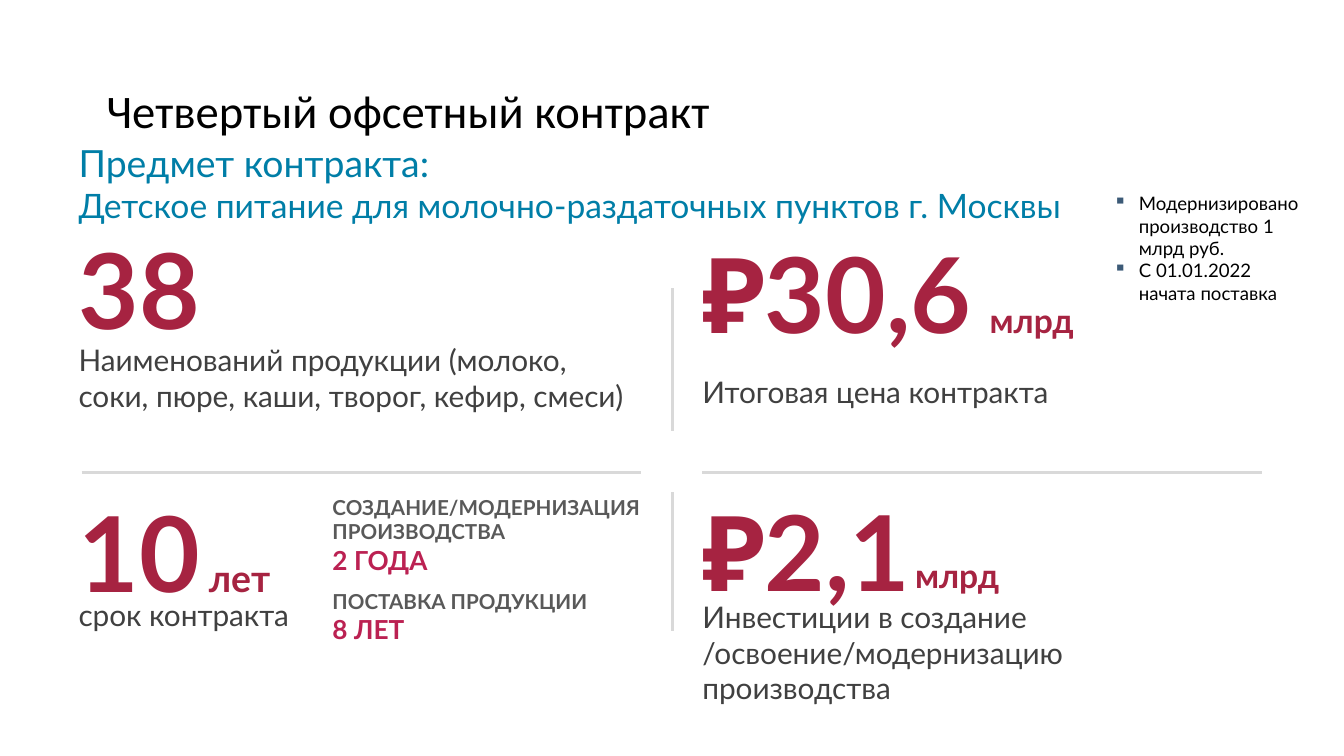
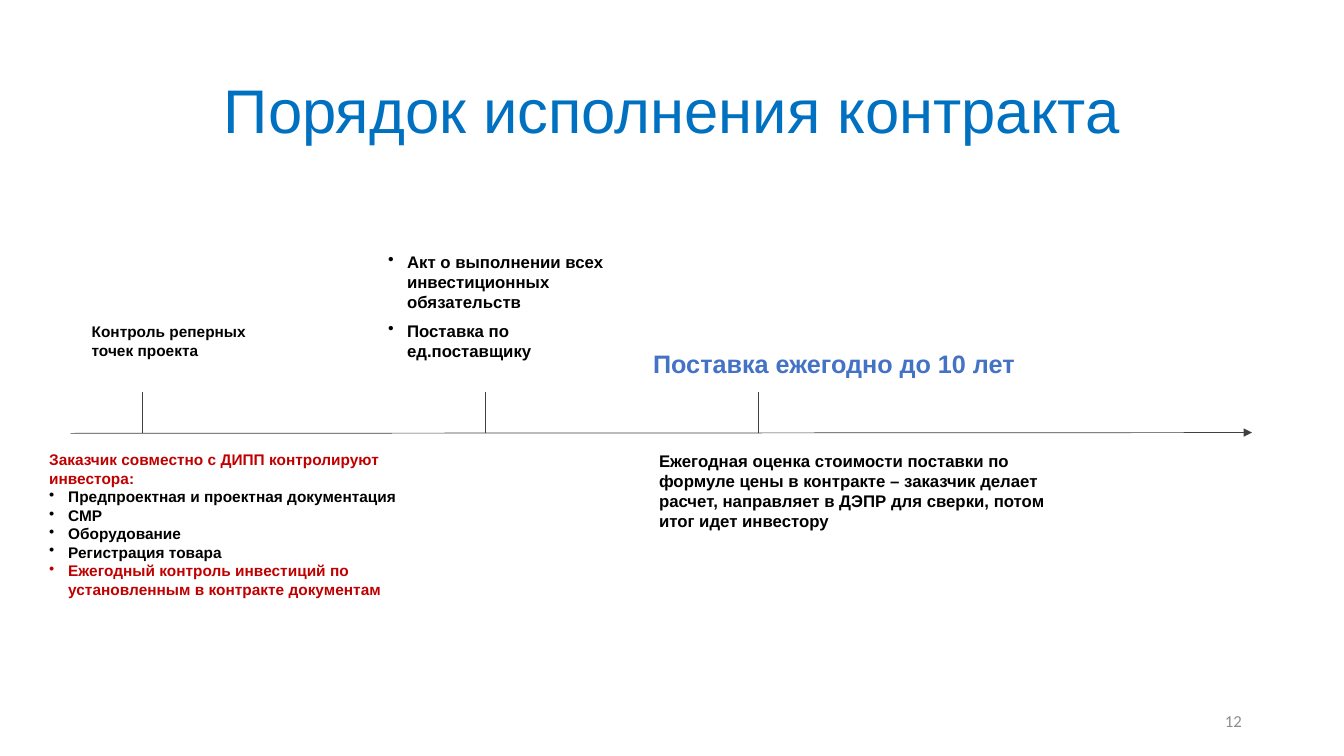
"""Builds two slides on an offset contract: key figures and the execution timeline."""
from dataclasses import dataclass
from typing import Optional

from lxml import etree
from pptx import Presentation
from pptx.dml.color import RGBColor
from pptx.enum import shapes, text
from pptx.oxml import ns
from pptx.util import Cm, Pt

BLACK = RGBColor(0x00, 0x00, 0x00)
CRIMSON = RGBColor(0xA6, 0x23, 0x41)
PINK = RGBColor(0xBB, 0x21, 0x52)
TEAL = RGBColor(0x00, 0x7E, 0xA7)
SLATE = RGBColor(0x3C, 0x5A, 0x77)
DARK_GREY = RGBColor(0x40, 0x40, 0x40)
MID_GREY = RGBColor(0x59, 0x59, 0x59)
NUMBER_GREY = RGBColor(0x8C, 0x8C, 0x8C)
RULE_GREY = RGBColor(0xD9, 0xD9, 0xD9)
TITLE_BLUE = RGBColor(0x00, 0x70, 0xC0)
BLUE = RGBColor(0x44, 0x72, 0xC4)
RED = RGBColor(0xC0, 0x00, 0x00)

TITLE_BOX = (2.34, 1.02, 29.21, 3.68)
LEFT, RIGHT = 1.73, 17.45


@dataclass(frozen=True)
class Style:
    """Font, size, colour and weight of a paragraph."""
    font: str
    size: float
    color: RGBColor
    bold: bool = False


@dataclass(frozen=True)
class Bullet:
    """Bullet sign, hanging indent in cm and colour (the text's when None)."""
    sign: str
    indent: float
    color: Optional[RGBColor] = None


FIGURE = Style("Lato", 74.7, CRIMSON, True)
UNIT = Style("Lato", 24, CRIMSON, True)
CAPTION = Style("Lato", 21.3, DARK_GREY)
STAGE = Style("Lato", 14.7, MID_GREY, True)
STAGE_TERM = Style("Lato", 18.7, PINK, True)
NOTE = Style("Lato", 13.3, BLACK)
STEP = Style("Arial", 12, BLACK, True)
DETAIL = Style("Arial", 11, BLACK, True)
DETAIL_RED = Style("Arial", 11, RED, True)
SQUARE = Bullet("▪", 0.64, SLATE)
DOT = Bullet("•", 0.48)


def add_bullet(paragraph, bullet, style):
    """Gives a paragraph a hanging bullet."""
    properties = paragraph._p.get_or_add_pPr()
    properties.set("marL", str(Cm(bullet.indent)))
    properties.set("indent", str(-Cm(bullet.indent)))
    color = etree.SubElement(properties, ns.qn("a:buClr"))
    etree.SubElement(color, ns.qn("a:srgbClr"), val=str(bullet.color or style.color))
    etree.SubElement(properties, ns.qn("a:buChar"), char=bullet.sign)


def add_text(slide, box, *lines, anchor=text.MSO_ANCHOR.TOP):
    """Adds a text box in cm; each line is (wording, style) or (wording, style, bullet)."""
    shape = slide.shapes.add_textbox(*map(Cm, box))
    frame = shape.text_frame
    frame.word_wrap = True
    frame.vertical_anchor = anchor
    for index, (wording, style, *bullets) in enumerate(lines):
        paragraph = frame.add_paragraph() if index else frame.paragraphs[0]
        for bullet in bullets:
            add_bullet(paragraph, bullet, style)
        paragraph.add_run().text = wording
        font = paragraph.font
        font.name, font.size, font.bold = style.font, Pt(style.size), style.bold
        font.color.rgb = style.color
    return frame


def add_title(slide, wording, style):
    """Adds the slide title in its shared place."""
    frame = add_text(slide, TITLE_BOX, (wording, style), anchor=text.MSO_ANCHOR.MIDDLE)
    frame.paragraphs[0].line_spacing = 0.9
    return frame


def add_line(slide, start, end, color, width, arrow=False):
    """Adds a straight line between two points in cm."""
    line = slide.shapes.add_connector(
        shapes.MSO_CONNECTOR.STRAIGHT, *map(Cm, (*start, *end)))
    line.line.color.rgb = color
    line.line.width = Pt(width)
    properties = line._element.spPr
    if arrow:
        etree.SubElement(line.line._get_or_add_ln(), ns.qn("a:tailEnd"), type="triangle")
    etree.SubElement(properties, ns.qn("a:effectLst"))


def add_figure(slide, left, top, wording, width=8):
    """Adds one large figure."""
    return add_text(slide, (left, top, width, 3.45), (wording, FIGURE))


def build_key_figures(slide):
    """Shows the subject of the contract and its four key figures."""
    frame = add_title(slide, "Четвертый офсетный контракт", Style("Calibri", 33.3, BLACK))
    frame.margin_left = frame.margin_right = Cm(0.34)
    add_text(slide, (LEFT, 3.4, 30.94, 2.41),
             ("Предмет контракта:", Style("Lato", 26.7, TEAL)),
             ("Детское питание для молочно-раздаточных пунктов г. Москвы",
              Style("Lato", 24, TEAL)))

    add_figure(slide, LEFT, 5.54, "38")
    term = add_figure(slide, LEFT, 12.17, "10", 6.12)
    unit = term.paragraphs[0].add_run()
    unit.text = " лет"
    unit.font.size = Pt(26.7)
    add_figure(slide, RIGHT, 5.64, "₽30,6")
    add_figure(slide, RIGHT, 12.14, "₽2,1")
    for left, top in ((24.69, 7.44), (22.81, 13.87)):
        add_text(slide, (left, top, 2.74, 1.27), ("млрд", UNIT))

    captions = (
        ((LEFT, 8.48, 14.27, 3),
         "Наименований продукции (молоко, соки, пюре, каши, творог, кефир, смеси)"),
        ((LEFT, 14.91, 6.12, 1.17), "срок контракта"),
        ((RIGHT, 9.3, 15.2, 1.17), "Итоговая цена контракта"),
        ((RIGHT, 14.96, 14.15, 3),
         "Инвестиции в создание /освоение/модернизацию производства"),
    )
    for box, wording in captions:
        add_text(slide, box, (wording, CAPTION))

    stages = (
        (12.34, "СОЗДАНИЕ/МОДЕРНИЗАЦИЯ ПРОИЗВОДСТВА", "2 ГОДА"),
        (14.71, "ПОСТАВКА ПРОДУКЦИИ", "8 ЛЕТ"),
    )
    for top, stage, duration in stages:
        add_text(slide, (8.13, top, 8.3, 1.68), (stage, STAGE), (duration, STAGE_TERM))

    add_text(slide, (27.81, 4.72, 5.31, 3.1),
             ("Модернизировано производство 1 млрд руб.", NOTE, SQUARE),
             ("С 01.01.2022 начата поставка", NOTE, SQUARE))

    for left in (2.06, 17.7):
        add_line(slide, (left, 11.91), (left + 14.1, 11.91), RULE_GREY, 2.25)
    for top, bottom in ((7.26, 10.87), (12.4, 15.9)):
        add_line(slide, (16.94, top), (16.94, bottom), RULE_GREY, 2.25)


def build_timeline(slide):
    """Shows how the contract is carried out along a time arrow."""
    frame = add_title(slide, "Порядок исполнения контракта", Style("Arial", 44, TITLE_BLUE))
    frame.paragraphs[0].alignment = text.PP_ALIGN.CENTER
    number = add_text(slide, (23.93, 17.65, 7.62, 1.02),
                      ("12", Style("Calibri", 12, NUMBER_GREY)),
                      anchor=text.MSO_ANCHOR.MIDDLE)
    number.paragraphs[0].alignment = text.PP_ALIGN.RIGHT

    add_line(slide, (1.78, 10.92), (31.55, 10.9), DARK_GREY, 0.5, arrow=True)
    for left in (3.58, 12.22, 19.1):
        add_line(slide, (left, 9.88), (left, 10.92), DARK_GREY, 0.5)

    add_text(slide, (2.06, 8, 5.26, 1.19), ("Контроль реперных точек проекта", DETAIL))
    acts = add_text(slide, (9.53, 6.22, 6.45, 3.02),
                    ("Акт о выполнении всех инвестиционных обязательств", STEP, DOT),
                    ("Поставка по ед.поставщику", STEP, DOT))
    for paragraph in acts.paragraphs:
        paragraph.space_after = Pt(6)
    add_text(slide, (16.21, 8.66, 10.59, 1.02),
             ("Поставка ежегодно до 10 лет", Style("Arial", 18, BLUE, True)))
    add_text(slide, (16.36, 11.23, 10.44, 2.31),
             ("Ежегодная оценка стоимости поставки по формуле цены в контракте – "
              "заказчик делает расчет, направляет в ДЭПР для сверки, потом итог "
              "идет инвестору", STEP))
    checks = ("Предпроектная и проектная документация", "СМР", "Оборудование",
              "Регистрация товара")
    add_text(slide, (0.99, 11.23, 10.44, 4.01),
             ("Заказчик совместно с ДИПП контролируют инвестора:", DETAIL_RED),
             *((check, DETAIL, DOT) for check in checks),
             ("Ежегодный контроль инвестиций по установленным в контракте документам",
              DETAIL_RED, DOT))


def main():
    """Builds and saves the presentation."""
    presentation = Presentation()
    presentation.slide_width = Cm(33.87)
    presentation.slide_height = Cm(19.05)
    blank = presentation.slide_layouts[6]
    for build in (build_key_figures, build_timeline):
        build(presentation.slides.add_slide(blank))
    presentation.save("out.pptx")


if __name__ == "__main__":
    main()
